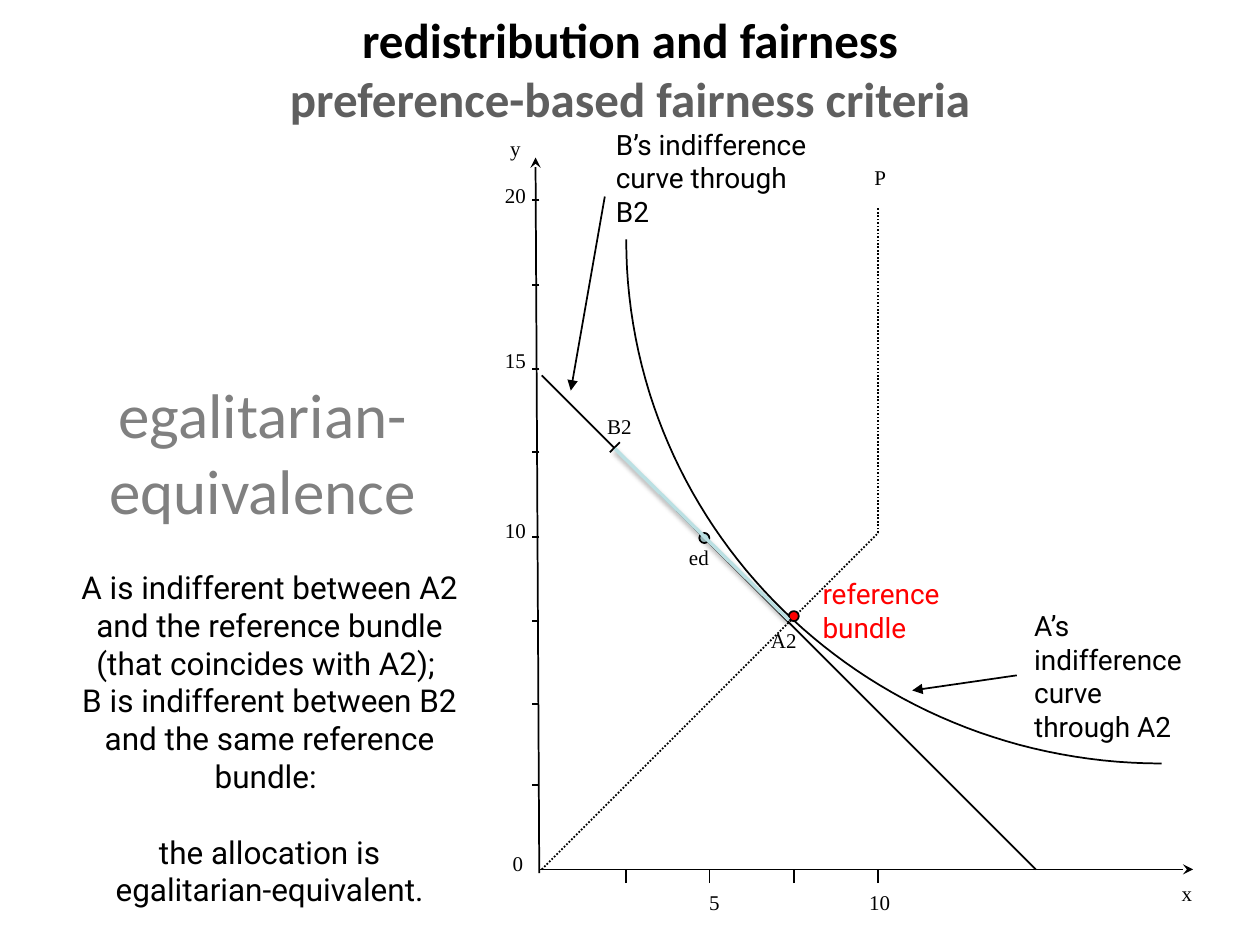
from lxml import etree
from pptx import Presentation
from pptx.dml.color import RGBColor
from pptx.enum import dml, shapes, text
from pptx.oxml.ns import qn
from pptx.util import Inches, Pt

BLACK, RED, PALE_BLUE = "000000", "FF0000", "BBE0E3"
AXIS_FONT, NOTE_FONT, TITLE_FONT = "Times New Roman", "Roboto", "Calibri"
ORIGIN_X, ORIGIN_Y = 4.28, 6.9


def color(hex_value):
    return RGBColor.from_string(hex_value)


def add_text(slide, box, paragraphs, font, size, hex_value=BLACK, bold=False,
             centered=False, middle=False, wrap=True, top_inset=0.05):
    frame = slide.shapes.add_textbox(*map(Inches, box)).text_frame
    frame.word_wrap = wrap
    frame.margin_top = Inches(top_inset)
    if middle:
        frame.vertical_anchor = text.MSO_ANCHOR.MIDDLE
    for index, (words, shade, gap) in enumerate(paragraphs):
        paragraph = frame.paragraphs[0] if index == 0 else frame.add_paragraph()
        paragraph.alignment = text.PP_ALIGN.CENTER if centered else text.PP_ALIGN.LEFT
        paragraph.space_before = Pt(gap)
        run = paragraph.add_run()
        run.text = words
        run.font.name = font
        run.font.size = Pt(size)
        run.font.bold = bold
        run.font.color.rgb = color(shade or hex_value)


def add_label(slide, words, left, top, width):
    add_text(slide, (left, top, width, 0.3), [(words, None, 0)], AXIS_FONT, 12,
             wrap=False)


def add_note(slide, words, box, hex_value=BLACK):
    add_text(slide, box, [(words, None, 0)], NOTE_FONT, 16, hex_value)


def add_line(slide, start, end, hex_value=BLACK, width=1, head=None, dotted=False):
    line = slide.shapes.add_connector(
        shapes.MSO_CONNECTOR.STRAIGHT, *map(Inches, (*start, *end)))
    line.line.color.rgb = color(hex_value)
    line.line.width = Pt(width)
    if dotted:
        line.line.dash_style = dml.MSO_LINE.ROUND_DOT
    if head:
        etree.SubElement(line.line._get_or_add_ln(), qn("a:tailEnd"), type=head)
    return etree.SubElement(line._element.spPr, qn("a:effectLst"))


def add_soft_shadow(effects):
    shadow = etree.SubElement(effects, qn("a:outerShdw"), blurRad=str(Pt(3.1)),
                              dist=str(Pt(1.6)), dir="5400000", rotWithShape="0")
    shade = etree.SubElement(shadow, qn("a:srgbClr"), val=BLACK)
    etree.SubElement(shade, qn("a:alpha"), val="38000")


def add_point(slide, left, top, hex_value):
    point = slide.shapes.add_shape(
        shapes.MSO_SHAPE.FLOWCHART_CONNECTOR, *map(Inches, (left, top, 0.08, 0.08)))
    point.shadow.inherit = False
    point.fill.solid()
    point.fill.fore_color.rgb = color(hex_value)
    point.line.color.rgb = color(BLACK)
    point.line.width = Pt(1)


def add_curve(slide, controls, steps=60):
    def position(t):
        weights = ((1 - t) ** 3, 3 * t * (1 - t) ** 2, 3 * t ** 2 * (1 - t), t ** 3)
        return tuple(Inches(sum(w * c[axis] for w, c in zip(weights, controls)))
                     for axis in (0, 1))

    points = [position(step / steps) for step in range(steps + 1)]
    builder = slide.shapes.build_freeform(*points[0])
    builder.add_line_segments(points[1:], close=False)
    curve = builder.convert_to_shape()
    curve.shadow.inherit = False
    curve.fill.background()
    curve.line.color.rgb = color(BLACK)
    curve.line.width = Pt(1)


def add_axes(slide):
    add_line(slide, (ORIGIN_X, ORIGIN_Y), (9.47, ORIGIN_Y), head="stealth")
    add_line(slide, (ORIGIN_X, 6.93), (4.25, 1.25), head="stealth")
    for y in (1.59, 2.26, 2.93, 3.59, 4.26, 4.93, 5.59, 6.23):
        add_line(slide, (ORIGIN_X, y), (4.22, y))
    for x in (4.97, 5.63, 6.3, 6.97):
        add_line(slide, (x, 7.01), (x, ORIGIN_Y))
    for words, left, top, width in (
            ("20", 3.91, 1.4, 0.37), ("15", 3.91, 2.71, 0.37),
            ("10", 3.91, 4.06, 0.37), ("0", 3.97, 6.7, 0.28),
            ("5", 5.53, 7.01, 0.28), ("10", 6.8, 7.01, 0.37),
            ("y", 3.95, 1.03, 0.28), ("x", 9.28, 6.94, 0.28)):
        add_label(slide, words, left, top, width)


def add_preferences(slide):
    kink = (6.97, 4.23)
    add_line(slide, (4.3, ORIGIN_Y), kink, dotted=True)
    add_line(slide, kink, (6.97, 1.65), dotted=True)
    add_curve(slide, ((4.97, 1.9), (4.97, 4.2), (6.87, 6.06), (9.22, 6.06)))
    for words, left, top, width in (
            ("P", 6.84, 1.26, 0.29), ("ed", 5.37, 4.27, 0.36),
            ("A2", 6.02, 4.93, 0.41), ("B2", 4.72, 3.23, 0.4)):
        add_label(slide, words, left, top, width)
    add_line(slide, (4.92, 3.51), (4.84, 3.59))
    add_line(slide, (8.22, ORIGIN_Y), (4.3, 2.98))
    add_point(slide, 5.55, 4.23, PALE_BLUE)
    add_note(slide, "A’s indifference curve through A2", (8.11, 4.78, 1.43, 1.18))
    add_note(slide, "B’s indifference curve through B2", (4.79, 0.96, 1.73, 0.91))
    add_line(slide, (4.8, 1.56), (4.53, 3.1), head="triangle")
    add_line(slide, (8.07, 5.36), (7.24, 5.48), head="triangle")
    add_point(slide, 6.26, 4.85, RED)
    add_note(slide, "reference bundle", (6.43, 4.53, 1.17, 0.64), RED)


def main():
    deck = Presentation()
    deck.slide_width, deck.slide_height = Inches(10), Inches(7.5)
    slide = deck.slides.add_slide(deck.slide_layouts[6])
    add_text(slide, (0.35, 1.7, 3.47, 3.15), [("egalitarian-equivalence", None, 0)],
             TITLE_FONT, 36, "808080", centered=True, middle=True, top_inset=0.66)
    add_axes(slide)
    add_preferences(slide)
    add_text(slide, (0.5, -0.08, 9, 1.25),
             [("redistribution and fairness", None, 0),
              ("preference-based fairness criteria", "5F5F5F", 0)],
             TITLE_FONT, 28, bold=True, centered=True, middle=True)
    add_text(slide, (0.54, 4.46, 3.2, 2.83),
             [("A is indifferent between A2 and the reference bundle "
               "(that coincides with A2); ", None, 0),
              ("B is indifferent between B2 and the same reference bundle: ", None, 0),
              ("the allocation is egalitarian-equivalent.", None, 21.6)],
             NOTE_FONT, 18, centered=True)
    add_soft_shadow(add_line(slide, (6.26, 4.92), (4.88, 3.56), PALE_BLUE, 2))
    deck.save("out.pptx")


if __name__ == "__main__":
    main()
